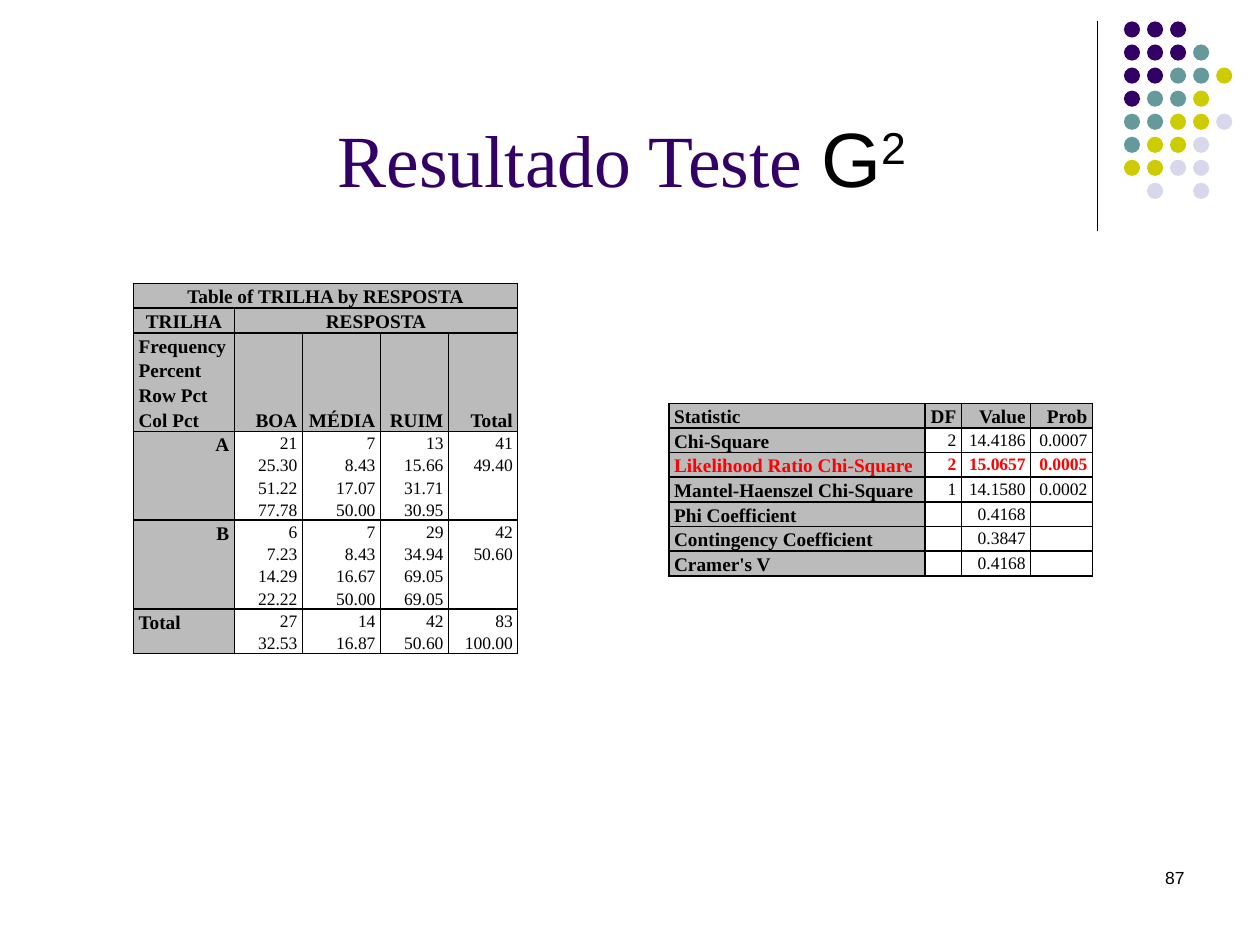
from dataclasses import dataclass

from pptx import Presentation
from pptx.dml.color import RGBColor
from pptx.enum.shapes import MSO_CONNECTOR, MSO_SHAPE
from pptx.enum.text import MSO_ANCHOR, MSO_AUTO_SIZE, PP_ALIGN
from pptx.oxml.xmlchemy import OxmlElement
from pptx.util import Inches, Pt

WIDE, HIGH = Inches(10), Inches(7.5)
LEFT, MID, RIGHT = PP_ALIGN.LEFT, PP_ALIGN.CENTER, PP_ALIGN.RIGHT


@dataclass(frozen=True)
class Theme:
    serif: str = "Times New Roman"
    sans: str = "Arial"
    ink: str = "000000"
    plum: str = "330066"
    teal: str = "669999"
    lime: str = "CCCC00"
    pale: str = "D8D8EC"
    gray: str = "BBBBBB"
    white: str = "FFFFFF"
    red: str = "FF0000"
    title: int = 42
    sign: int = 44
    head: int = 11
    body: int = 10
    lead: float = 1.15
    pitch: float = 1.27


LOOK = Theme()

DOTS = ["PPP", "PPPT", "PPTTY", "PTTY", "TTYYL", "TYYL", "YYLL", " L L"]
HUES = {"P": LOOK.plum, "T": LOOK.teal, "Y": LOOK.lime, "L": LOOK.pale}

TRAILS = [
    ["Table of TRILHA by RESPOSTA", "", "", "", ""],
    ["TRILHA", "RESPOSTA", "", "", ""],
    ["Frequency\nPercent\nRow Pct\nCol Pct", "BOA", "MÉDIA", "RUIM", "Total"],
    ["A", "21\n25.30\n51.22\n77.78", "7\n8.43\n17.07\n50.00",
     "13\n15.66\n31.71\n30.95", "41\n49.40"],
    ["B", "6\n7.23\n14.29\n22.22", "7\n8.43\n16.67\n50.00",
     "29\n34.94\n69.05\n69.05", "42\n50.60"],
    ["Total", "27\n32.53", "14\n16.87", "42\n50.60", "83\n100.00"],
]

TESTS = [
    ["Statistic", "DF", "Value", "Prob"],
    ["Chi-Square", "2", "14.4186", "0.0007"],
    ["Likelihood Ratio Chi-Square", "2", "15.0657", "0.0005"],
    ["Mantel-Haenszel Chi-Square", "1", "14.1580", "0.0002"],
    ["Phi Coefficient", "", "0.4168", ""],
    ["Contingency Coefficient", "", "0.3847", ""],
    ["Cramer's V", "", "0.4168", ""],
]


def across(share):
    return int(WIDE * share / 100)


def down(share):
    return int(HIGH * share / 100)


def box(x, y, w, h):
    return across(x), down(y), across(w), down(h)


def paint(fill, hue):
    fill.solid()
    fill.fore_color.rgb = RGBColor.from_string(hue)


def write(para, text, size, face, hue, bold=False):
    run = para.add_run()
    run.text = text
    font = run.font
    font.size, font.name, font.bold = Pt(size), face, bold
    font.color.rgb = RGBColor.from_string(hue)
    return run


def add_rule(slide, x, top, base):
    rule = slide.shapes.add_connector(
        MSO_CONNECTOR.STRAIGHT, across(x), down(top), across(x), down(base))
    rule.line.color.rgb = RGBColor.from_string(LOOK.ink)
    rule.line.width = Pt(0.75)
    rule._element.spPr.append(OxmlElement("a:effectLst"))


def add_dots(slide, x, y, step, drop):
    group = slide.shapes.add_group_shape()
    for row, line in enumerate(DOTS):
        for col, key in enumerate(line):
            if key in HUES:
                spot = box(x + col * step, y + row * drop, 1.28, 1.71)
                dot = group.shapes.add_shape(MSO_SHAPE.OVAL, *spot)
                dot.shadow.inherit = False
                paint(dot.fill, HUES[key])
                dot.line.fill.background()


def add_title(slide, *spot):
    title = slide.shapes.title
    title.left, title.top, title.width, title.height = box(*spot)
    frame = title.text_frame
    frame.auto_size = MSO_AUTO_SIZE.NONE
    frame.vertical_anchor = MSO_ANCHOR.BOTTOM
    para = frame.paragraphs[0]
    para.alignment = MID
    write(para, "Resultado Teste ", LOOK.title, LOOK.serif, LOOK.plum)
    write(para, "G", LOOK.sign, LOOK.sans, LOOK.ink)
    power = write(para, "2", LOOK.sign, LOOK.sans, LOOK.ink)
    power._r.get_or_add_rPr().set("baseline", "30000")


def edge(cell):
    props = cell._tc.get_or_add_tcPr()
    for side in "LRTB":
        line = OxmlElement(f"a:ln{side}")
        line.set("w", str(Pt(1)))
        fill = OxmlElement("a:solidFill")
        hue = OxmlElement("a:srgbClr")
        hue.set("val", LOOK.ink)
        fill.append(hue)
        line.append(fill)
        props.append(line)


def fill_cell(cell, text, align, head, size, hue, bold, base):
    edge(cell)
    paint(cell.fill, LOOK.gray if head else LOOK.white)
    cell.margin_left = cell.margin_right = Inches(0.04)
    cell.margin_top = cell.margin_bottom = 0
    cell.vertical_anchor = MSO_ANCHOR.BOTTOM if base else MSO_ANCHOR.TOP
    para = cell.text_frame.paragraphs[0]
    para.alignment = align
    para.line_spacing = LOOK.lead
    if not text:
        end = OxmlElement("a:endParaRPr")
        end.set("sz", str(size * 100))
        para._p.append(end)
        return
    for spot, part in enumerate(text.split("\n")):
        if spot:
            para.add_line_break()
        write(para, part, size, LOOK.serif, hue, bold)


def add_grid(slide, x, y, cols, data, heads, marks=None, spans=(), hot=None):
    marks = marks or {}
    frame = slide.shapes.add_table(
        len(data), len(cols), *box(x, y, sum(cols), len(data)))
    grid = frame.table
    grid.first_row = grid.horz_banding = False
    for col, width in zip(grid.columns, cols):
        col.width = across(width)
    for row, line in enumerate(data):
        tall = 0
        for col, text in enumerate(line):
            head = row < heads or col == 0
            size = LOOK.head if head else LOOK.body
            align = marks.get((row, col), RIGHT if col else LEFT)
            hue = LOOK.red if row == hot else LOOK.ink
            fill_cell(grid.cell(row, col), text, align, head, size, hue,
                      head or row == hot, row < heads)
            tall = max(tall, size * (text.count("\n") + 1))
        grid.rows[row].height = Pt(tall * LOOK.pitch)
    for row, col in spans:
        grid.cell(row, col).merge(grid.cell(row, len(cols) - 1))


def add_page(slide, text, *spot):
    frame = slide.shapes.add_textbox(*box(*spot)).text_frame
    frame.word_wrap = True
    para = frame.paragraphs[0]
    para.alignment = RIGHT
    write(para, text, LOOK.body, LOOK.sans, LOOK.ink)


def main():
    deck = Presentation()
    deck.slide_width, deck.slide_height = WIDE, HIGH
    slide = deck.slides.add_slide(deck.slide_layouts[5])
    add_rule(slide, 87.1, 2.27, 24.4)
    add_dots(slide, 89.2, 2.27, 1.83, 2.44)
    add_title(slide, 10.2, 1.47, 78.3, 20.67)
    add_grid(slide, 10.6, 30, [8, 5.4, 6.2, 5.4, 5.5], TRAILS, 3,
             {(0, 0): MID, (1, 0): MID, (1, 1): MID,
              (3, 0): RIGHT, (4, 0): RIGHT}, [(0, 0), (1, 1)])
    add_grid(slide, 53.1, 42.67, [20.3, 2.9, 5.5, 4.9], TESTS, 1, hot=2)
    add_page(slide, "87", 71.7, 91.07, 23.3, 6.67)
    deck.save("out.pptx")


if __name__ == "__main__":
    main()
